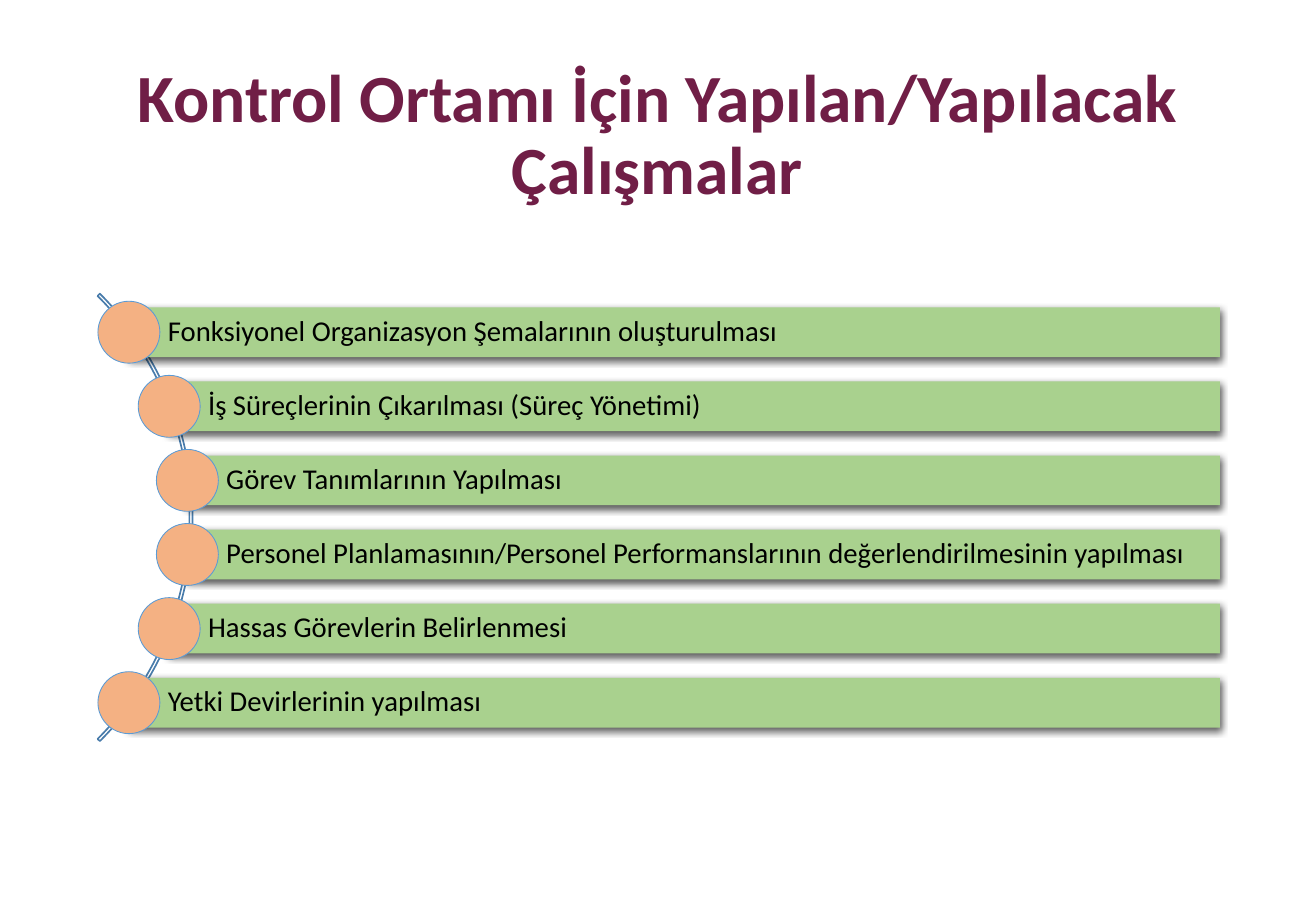
"""Build the slide listing the control environment activities along an arc."""
from math import sqrt

from lxml import etree
from pptx import Presentation
from pptx.dml.color import RGBColor
from pptx.enum import shapes, text
from pptx.oxml import ns
from pptx.util import Inches, Pt

TITLE = "Kontrol Ortamı İçin Yapılan/Yapılacak Çalışmalar"
ACTIVITIES = [
    "Fonksiyonel Organizasyon Şemalarının oluşturulması",
    "İş Süreçlerinin Çıkarılması (Süreç Yönetimi)",
    "Görev Tanımlarının Yapılması",
    "Personel Planlamasının/Personel Performanslarının değerlendirilmesinin yapılması",
    "Hassas Görevlerin Belirlenmesi",
    "Yetki Devirlerinin yapılması",
]
COLORS = {
    "title": "701E46",
    "text": "000000",
    "bar": "A9D18E",
    "dot": "F4B183",
    "dot_line": "5B9BD5",
    "arc_line": "497CAB",
    "shadow": "000000",
}
FONT = "Calibri"
ARC_X, ARC_Y, ARC_SIZE = -1.02, 4.26, 5.21
DOT_RADIUS = 2.58
ROW_STEP, BAR_HEIGHT, DOT_SIZE = 0.61, 0.41, 0.51
BAR_RIGHT = 10.04


def color(name):
    return RGBColor.from_string(COLORS[name])


def add_shape(page, kind, left, top, width, height, fill=None, line=None, weight=1):
    shape = page.shapes.add_shape(
        kind, Inches(left), Inches(top), Inches(width), Inches(height))
    shape.shadow.inherit = False
    if fill:
        shape.fill.solid()
        shape.fill.fore_color.rgb = color(fill)
    else:
        shape.fill.background()
    if line:
        shape.line.color.rgb = color(line)
        shape.line.width = Pt(weight)
    else:
        shape.line.fill.background()
    return shape


def add_shadow(shape):
    effects = shape._element.spPr.find(ns.qn("a:effectLst"))
    shadow = etree.SubElement(
        effects, ns.qn("a:outerShdw"), blurRad=str(Pt(4.5)), dist=str(Pt(1.5)),
        dir="5400000", algn="ctr", rotWithShape="0")
    tone = etree.SubElement(shadow, ns.qn("a:srgbClr"), val=COLORS["shadow"])
    etree.SubElement(tone, ns.qn("a:alpha"), val="63000")


def write(shape, words, size, ink, align, bold=False):
    frame = shape.text_frame
    frame.word_wrap = True
    frame.vertical_anchor = text.MSO_ANCHOR.MIDDLE
    para = frame.paragraphs[0]
    para.alignment = align
    para.line_spacing = 0.9
    span = para.add_run()
    span.text = words
    span.font.name = FONT
    span.font.size = Pt(size)
    span.font.bold = bold
    span.font.color.rgb = color(ink)
    return frame


def add_activity(page, row, words):
    offset = (row - (len(ACTIVITIES) - 1) / 2) * ROW_STEP
    x = ARC_X + sqrt(DOT_RADIUS ** 2 - offset ** 2)
    y = ARC_Y + offset
    bar = add_shape(page, shapes.MSO_SHAPE.RECTANGLE, x, y - BAR_HEIGHT / 2,
                    BAR_RIGHT - x, BAR_HEIGHT, "bar")
    add_shadow(bar)
    frame = write(bar, words, 17, "text", text.PP_ALIGN.LEFT)
    frame.margin_left = Inches(0.32)
    frame.margin_right = frame.margin_top = frame.margin_bottom = Inches(0.05)
    add_shape(page, shapes.MSO_SHAPE.OVAL, x - DOT_SIZE / 2, y - DOT_SIZE / 2,
              DOT_SIZE, DOT_SIZE, "dot", "dot_line", 0.5)


def main():
    deck = Presentation()
    deck.slide_width, deck.slide_height = Inches(10.83), Inches(7.5)
    page = deck.slides.add_slide(deck.slide_layouts[5])

    title = page.shapes.title
    title.left, title.top = Inches(0.74), Inches(0.4)
    title.width, title.height = Inches(9.34), Inches(1.45)
    write(title, TITLE, 40, "title", text.PP_ALIGN.CENTER, bold=True)

    arc = add_shape(page, shapes.MSO_SHAPE.BLOCK_ARC, ARC_X - ARC_SIZE / 2,
                    ARC_Y - ARC_SIZE / 2, ARC_SIZE, ARC_SIZE, line="arc_line")
    for index, value in enumerate((189, 27, 0.005)):
        arc.adjustments[index] = value

    for row, words in enumerate(ACTIVITIES):
        add_activity(page, row, words)
    deck.save("out.pptx")


if __name__ == "__main__":
    main()
